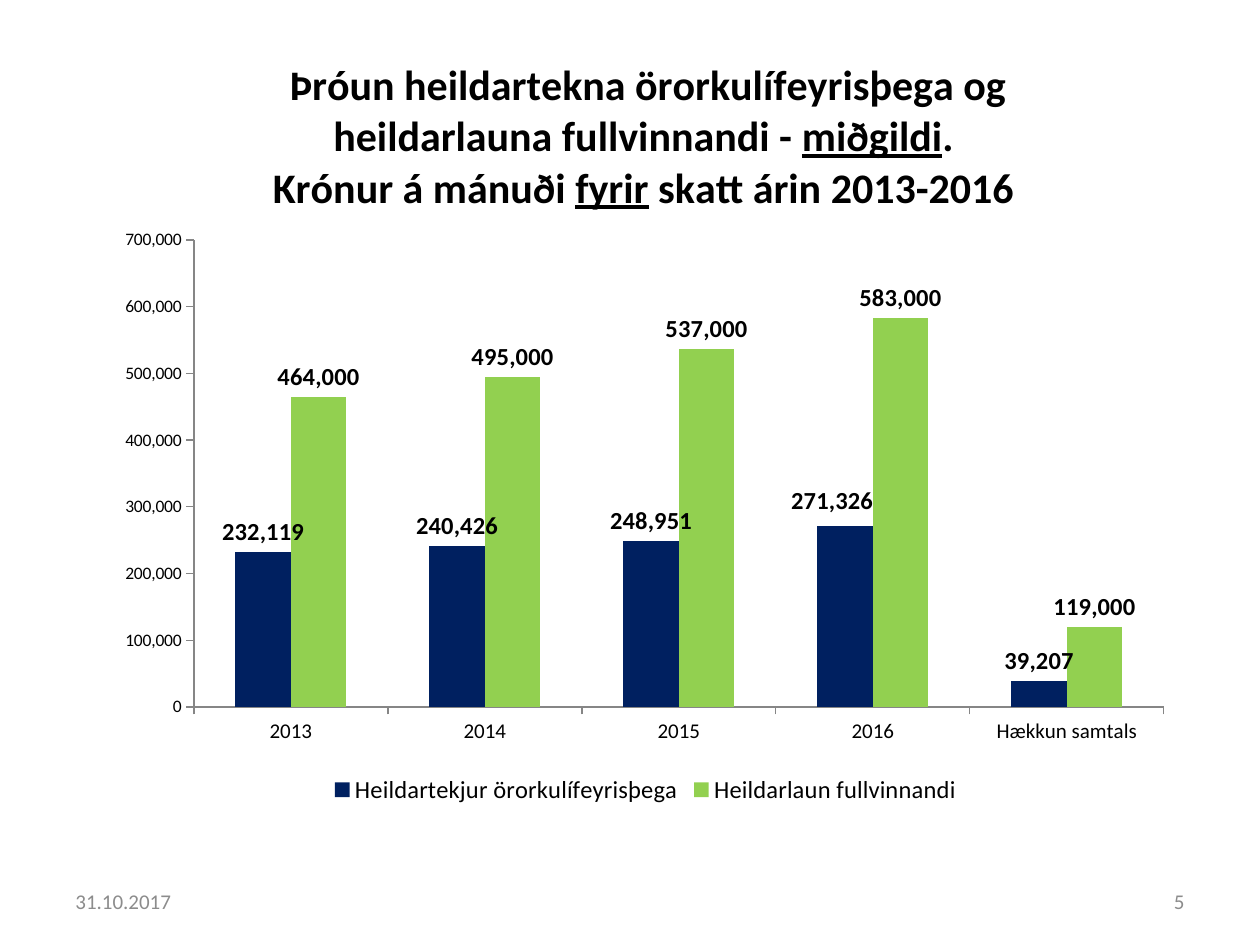
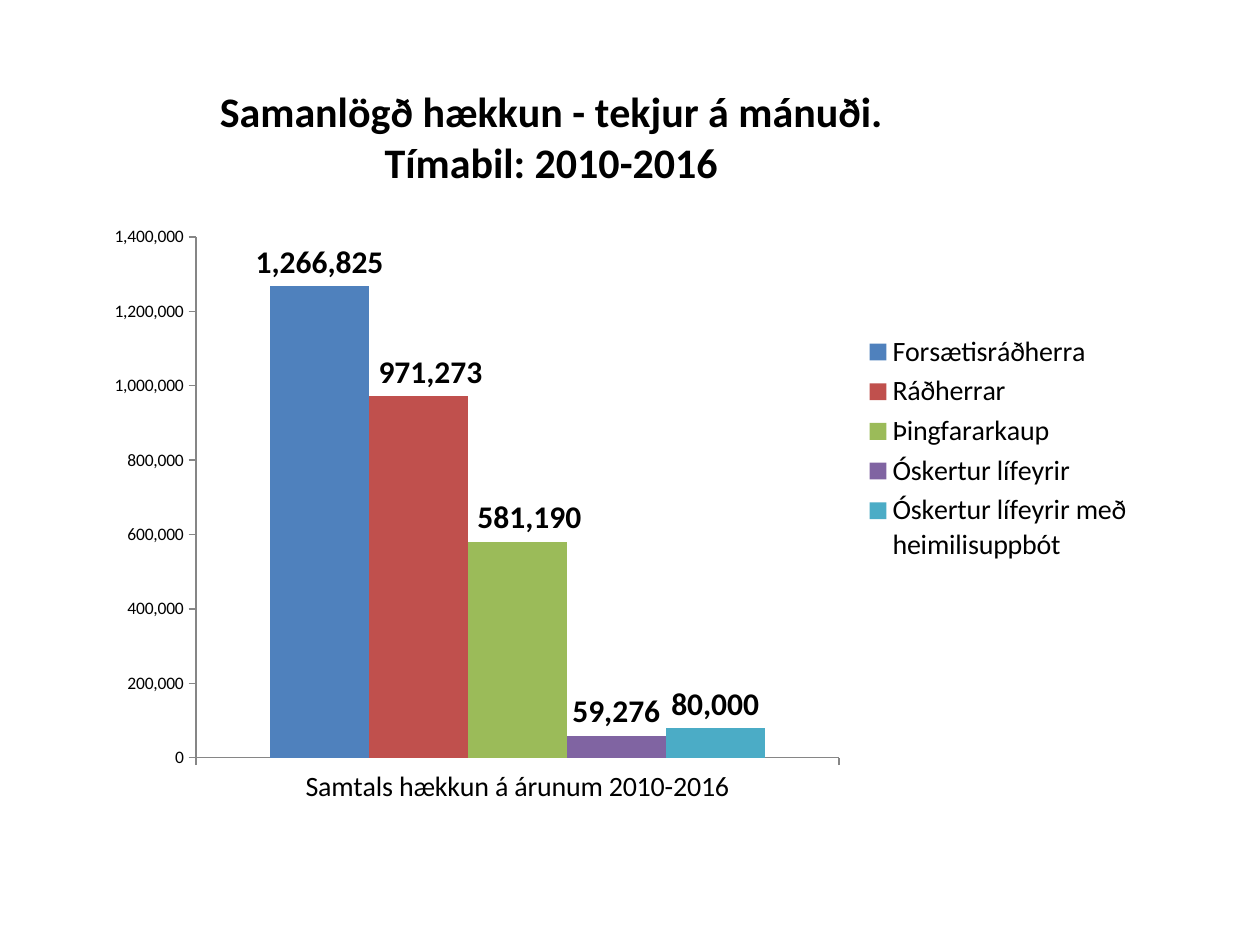
import dataclasses

import pptx
import pptx.chart.data
import pptx.dml.color
import pptx.enum.chart
import pptx.enum.text
import pptx.oxml
import pptx.oxml.ns
import pptx.util


@dataclasses.dataclass(frozen=True)
class Theme:
    font: str = "Calibri"
    ink: str = "000000"
    muted: str = "8C8C8C"
    axis: str = "868686"
    title_size: int = 24
    axis_size: int = 10
    footer_size: int = 12
    number_format: str = "#,##0"


theme = Theme()
PX = 914400 / 126
WIDTH, HEIGHT = 1260, 945
rgb = pptx.dml.color.RGBColor.from_string


def style(font, size, color=theme.ink, bold=False):
    font.name, font.size, font.bold = theme.font, pptx.util.Pt(size), bold
    font.color.rgb = rgb(color)


def set_layout(parent, index, inner=False, **fractions):
    """Give a chart part a manual layout, as fractions of the chart."""
    for old in parent.findall(pptx.oxml.ns.qn("c:layout")):
        parent.remove(old)
    tags = '<c:layoutTarget val="inner"/>' if inner else ""
    if "w" in fractions or parent.tag.endswith("}title"):
        tags += '<c:xMode val="edge"/><c:yMode val="edge"/>'
    tags += "".join(f'<c:{key} val="{value:.4f}"/>' for key, value in fractions.items())
    parent.insert(index, pptx.oxml.parse_xml(
        f'<c:layout {pptx.oxml.ns.nsdecls("c")}><c:manualLayout>{tags}</c:manualLayout></c:layout>'))


# Content: title lines are lists of (text, underlined); boxes are left, top, width, height;
# label shifts map (series, point) to an offset in px
slides = [
    dict(
        title=[[("Þróun heildartekna örorkulífeyrisþega og heildarlauna fullvinnandi - ", False),
                ("miðgildi", True), (". ", False)],
               [("Krónur á mánuði ", False), ("fyrir", True), (" skatt árin 2013-2016 ", False)]],
        title_at=(269, 55), box=(105, 26, 1081, 784), plot=(194, 240, 970, 467),
        categories=["2013", "2014", "2015", "2016", "Hækkun samtals"],
        series=[("Heildartekjur örorkulífeyrisþega", "002060", [232119, 240426, 248951, 271326, 39207]),
                ("Heildarlaun fullvinnandi", "92D050", [464000, 495000, 537000, 583000, 119000])],
        legend="BOTTOM", legend_size=14, category_size=12, label_size=14,
        top=700000, step=100000, shifts={(0, 3): (-13, -5)},
        footer=[("31.10.2017", 63, "LEFT"), ("5", 903, "RIGHT")],
    ),
    dict(
        title=[[("Samanlögð hækkun - tekjur á mánuði. ", False)], [("Tímabil: 2010-2016 ", False)]],
        title_at=(216, 82), box=(94, 76, 1052, 745), plot=(196, 237, 643, 521),
        categories=["Samtals hækkun á árunum 2010-2016"],
        series=[("Forsætisráðherra", "4F81BD", [1266825]),
                ("Ráðherrar", "C0504D", [971273]),
                ("Þingfararkaup", "9BBB59", [581190]),
                ("Óskertur lífeyrir", "8064A2", [59276]),
                ("Óskertur lífeyrir með heimilisuppbót", "4BACC6", [80000])],
        legend="RIGHT", legend_size=16, category_size=16, label_size=18,
        top=1400000, step=200000, shifts={(1, 0): (12, 0), (2, 0): (12, 0)},
        footer=[],
    ),
]

deck = pptx.Presentation()
deck.slide_width, deck.slide_height = round(WIDTH * PX), round(HEIGHT * PX)

for content in slides:
    slide = deck.slides.add_slide(deck.slide_layouts[6])
    left, top, width, height = content["box"]

    # Column chart
    data = pptx.chart.data.CategoryChartData(number_format=theme.number_format)
    data.categories = content["categories"]
    for name, color, values in content["series"]:
        data.add_series(name, values)
    chart = slide.shapes.add_chart(
        pptx.enum.chart.XL_CHART_TYPE.COLUMN_CLUSTERED,
        *[round(length * PX) for length in content["box"]], data).chart
    style(chart.font, theme.axis_size)
    columns = chart.plots[0]
    columns.gap_width, columns.overlap = 150, 0
    columns.vary_by_categories = False
    plot_left, plot_top, plot_width, plot_height = content["plot"]
    set_layout(chart._chartSpace.chart.plotArea, 0, inner=True,
               x=(plot_left - left) / width, y=(plot_top - top) / height,
               w=plot_width / width, h=plot_height / height)

    # Title
    chart.has_title = True
    heading = chart.chart_title.text_frame
    for number, line in enumerate(content["title"]):
        paragraph = heading.add_paragraph() if number else heading.paragraphs[0]
        for text, underlined in line:
            run = paragraph.add_run()
            run.text = text
            style(run.font, theme.title_size, bold=True)
            run.font.underline = underlined
    chart.chart_title.include_in_layout = False
    title_left, title_top = content["title_at"]
    set_layout(chart.chart_title._element, 1,
               x=(title_left - left) / width, y=(title_top - top) / height)

    # Axes
    for axis, size in ((chart.category_axis, content["category_size"]),
                       (chart.value_axis, theme.axis_size)):
        axis.has_major_gridlines = False
        axis.major_tick_mark = pptx.enum.chart.XL_TICK_MARK.OUTSIDE
        axis.minor_tick_mark = pptx.enum.chart.XL_TICK_MARK.NONE
        axis.format.line.color.rgb = rgb(theme.axis)
        axis.format.line.width = pptx.util.Pt(0.75)
        style(axis.tick_labels.font, size)
    amounts = chart.value_axis
    amounts.minimum_scale, amounts.maximum_scale = 0, content["top"]
    amounts.major_unit = content["step"]
    amounts.tick_labels.number_format = theme.number_format
    amounts.tick_labels.number_format_is_linked = False

    # Series and value labels
    outside = pptx.enum.chart.XL_LABEL_POSITION.OUTSIDE_END
    for series, (name, color, values) in zip(columns.series, content["series"]):
        series.format.fill.solid()
        series.format.fill.fore_color.rgb = rgb(color)
        series.invert_if_negative = False
        labels = series.data_labels
        labels.show_value = True
        labels.position = outside
        labels.number_format = theme.number_format
        labels.number_format_is_linked = False
        style(labels.font, content["label_size"], bold=True)
    for (series_index, point), (dx, dy) in content["shifts"].items():
        series = columns.series[series_index]
        label = series.points[point].data_label
        style(label.font, content["label_size"], bold=True)
        label.position = outside
        set_layout(series.data_labels._element.dLbl_lst[0], 1, x=dx / width, y=dy / height)

    # Legend
    chart.has_legend = True
    chart.legend.position = getattr(pptx.enum.chart.XL_LEGEND_POSITION, content["legend"])
    chart.legend.include_in_layout = False
    style(chart.legend.font, content["legend_size"])

    # Footer
    for text, footer_left, alignment in content["footer"]:
        footer = slide.shapes.add_textbox(
            *[round(length * PX) for length in (footer_left, 876, 294, 50)]).text_frame
        footer.word_wrap = True
        footer.vertical_anchor = pptx.enum.text.MSO_ANCHOR.MIDDLE
        footer.text = text
        footer.paragraphs[0].alignment = getattr(pptx.enum.text.PP_ALIGN, alignment)
        style(footer.paragraphs[0].runs[0].font, theme.footer_size, theme.muted)

deck.save("out.pptx")
